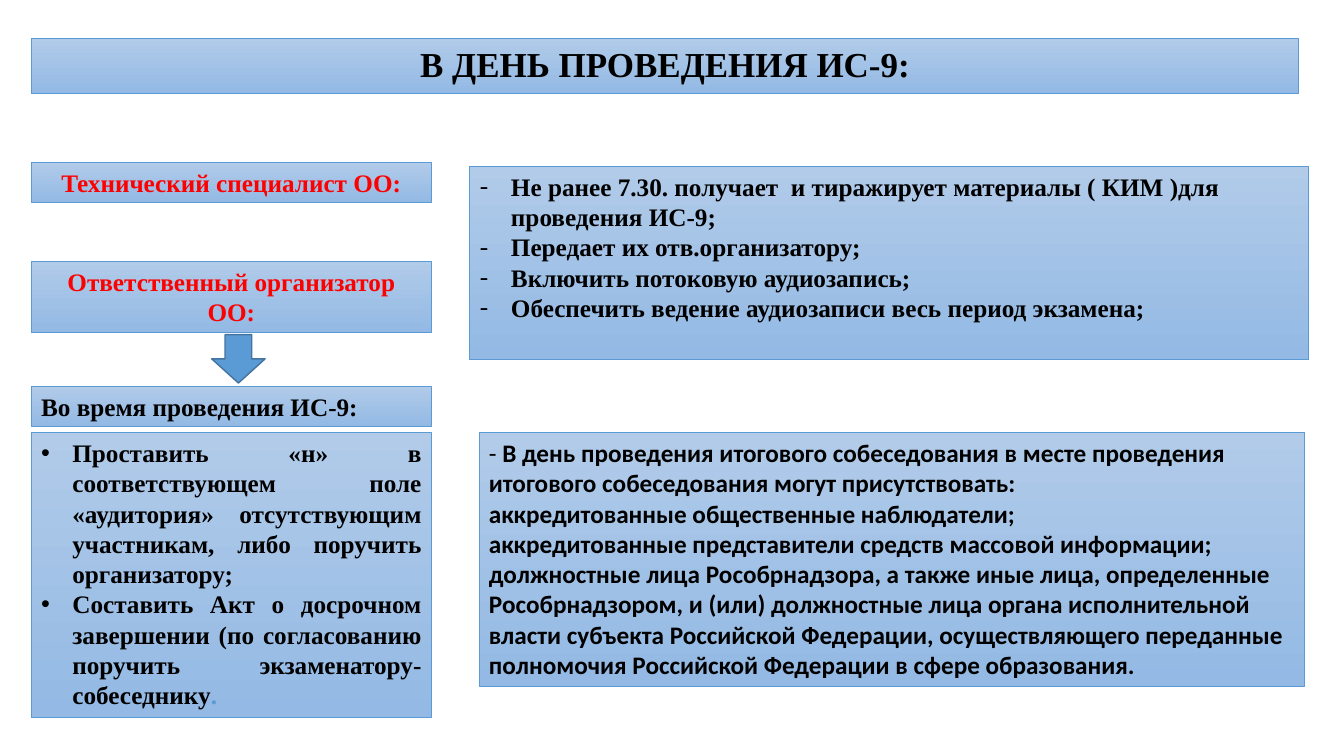
"""Builds the slide on duties during the day of the IS-9 oral interview."""
from dataclasses import dataclass

from lxml import etree
from pptx import Presentation
from pptx.dml.color import RGBColor
from pptx.enum.shapes import MSO_SHAPE
from pptx.enum.text import MSO_ANCHOR, PP_ALIGN
from pptx.oxml.ns import qn
from pptx.util import Inches, Pt

RECTANGLE, DOWN_ARROW = MSO_SHAPE.RECTANGLE, MSO_SHAPE.DOWN_ARROW
TOP, MIDDLE = MSO_ANCHOR.TOP, MSO_ANCHOR.MIDDLE
LEFT, CENTER, JUSTIFY = PP_ALIGN.LEFT, PP_ALIGN.CENTER, PP_ALIGN.JUSTIFY


@dataclass(frozen=True)
class Theme:
    serif: str = "Times New Roman"
    sans: str = "Calibri"
    title_size: int = 25
    body_size: int = 18
    ink: str = "000000"
    role: str = "FF0000"
    accent: str = "5B9BD5"
    arrow_edge: str = "43739E"
    panel_top: str = "B1CBE9"
    panel_bottom: str = "93B9E4"
    panel_edge_width: float = 0.5
    arrow_edge_width: float = 1
    hanging: float = 0.31


THEME = Theme()

TITLE = ["В ДЕНЬ ПРОВЕДЕНИЯ ИС-9:"]
SPECIALIST = ["Технический специалист ОО:"]
ORGANIZER = ["Ответственный организатор ОО:"]
DURING = ["Во время проведения ИС-9:"]
SPECIALIST_DUTIES = [
    "Не ранее 7.30. получает  и тиражирует материалы ( КИМ )для проведения ИС-9;",
    "Передает их отв.организатору;",
    "Включить потоковую аудиозапись;",
    "Обеспечить ведение аудиозаписи весь период экзамена;",
]
ORGANIZER_DUTIES = [
    "Проставить «н» в соответствующем поле «аудитория» отсутствующим участникам, "
    "либо поручить организатору;",
    "Составить Акт о досрочном завершении (по согласованию поручить "
    "экзаменатору-собеседнику",
]
ATTENDEES = [
    "В день проведения итогового собеседования в месте проведения итогового "
    "собеседования могут присутствовать:",
    "аккредитованные общественные наблюдатели;",
    "аккредитованные представители средств массовой информации;",
    "должностные лица Рособрнадзора, а также иные лица, определенные Рособрнадзором, "
    "и (или) должностные лица органа исполнительной власти субъекта Российской "
    "Федерации, осуществляющего переданные полномочия Российской Федерации в сфере "
    "образования.",
]

COLUMNS = {
    "full": (0.31, 12.57),
    "roles": (0.31, 3.97),
    "duties": (4.66, 8.32),
    "attendees": (4.75, 8.19),
    "arrow": (2.1, 0.53),
}
ROWS = {
    "title": (0.38, 0.55),
    "specialist": (1.61, 0.4),
    "duties": (1.65, 1.92),
    "organizer": (2.59, 0.71),
    "arrow": (3.32, 0.48),
    "during": (3.83, 0.4),
    "organizer duties": (4.29, 2.83),
    "attendees": (4.29, 2.52),
}


def color(value):
    return RGBColor.from_string(value)


def add_block(slide, preset, column, row, edge, edge_width):
    (left, width), (top, height) = COLUMNS[column], ROWS[row]
    block = slide.shapes.add_shape(
        preset, Inches(left), Inches(top), Inches(width), Inches(height))
    block.shadow.inherit = False
    block.line.color.rgb = color(edge)
    block.line.width = Pt(edge_width)
    return block


def style_run(run, ink, size, font, bold=True):
    run.font.name = font
    run.font.size = Pt(size)
    run.font.bold = bold
    run.font.color.rgb = color(ink)


def add_bullet(paragraph, mark):
    properties = paragraph._p.get_or_add_pPr()
    indent = Inches(THEME.hanging)
    properties.set("marL", str(indent))
    properties.set("indent", str(-indent))
    font = "Arial" if mark == "•" else THEME.serif
    etree.SubElement(properties, qn("a:buFont")).set("typeface", font)
    etree.SubElement(properties, qn("a:buChar")).set("char", mark)


def add_panel(slide, column, row, lines, ink=THEME.ink, size=THEME.body_size,
              font=THEME.serif, align=LEFT, anchor=TOP, mark=None):
    panel = add_block(slide, RECTANGLE, column, row, THEME.accent, THEME.panel_edge_width)
    panel.fill.gradient()
    panel.fill.gradient_angle = 270
    for stop, shade in zip(panel.fill.gradient_stops, (THEME.panel_top, THEME.panel_bottom)):
        stop.color.rgb = color(shade)
    frame = panel.text_frame
    frame.word_wrap = True
    frame.vertical_anchor = anchor
    frame.text = "\n".join(lines)
    for paragraph in frame.paragraphs:
        paragraph.alignment = align
        if mark:
            add_bullet(paragraph, mark)
        for run in paragraph.runs:
            style_run(run, ink, size, font)
    return frame.paragraphs


def main():
    deck = Presentation()
    deck.slide_width, deck.slide_height = Inches(13.33), Inches(7.5)
    slide = deck.slides.add_slide(deck.slide_layouts[6])

    heading = add_panel(slide, "full", "title", TITLE, size=THEME.title_size,
                        align=CENTER, anchor=MIDDLE)
    heading[0].line_spacing = 0.9
    add_panel(slide, "roles", "specialist", SPECIALIST, ink=THEME.role, align=CENTER)
    add_panel(slide, "duties", "duties", SPECIALIST_DUTIES, mark="-")
    add_panel(slide, "roles", "organizer", ORGANIZER, ink=THEME.role, align=CENTER)

    attendees = add_panel(slide, "attendees", "attendees", ATTENDEES, font=THEME.sans)
    opening = attendees[0].runs[0]
    statement = attendees[0].add_run()
    opening.text, statement.text = "- ", ATTENDEES[0]
    style_run(opening, THEME.ink, THEME.body_size, THEME.sans, bold=False)
    style_run(statement, THEME.ink, THEME.body_size, THEME.sans)

    add_panel(slide, "roles", "during", DURING)
    arrow = add_block(slide, DOWN_ARROW, "arrow", "arrow",
                      THEME.arrow_edge, THEME.arrow_edge_width)
    arrow.fill.solid()
    arrow.fill.fore_color.rgb = color(THEME.accent)

    duties = add_panel(slide, "roles", "organizer duties", ORGANIZER_DUTIES,
                       align=JUSTIFY, mark="•")
    full_stop = duties[-1].add_run()
    full_stop.text = "."
    style_run(full_stop, THEME.accent, THEME.body_size, THEME.serif)

    deck.save("out.pptx")


if __name__ == "__main__":
    main()
